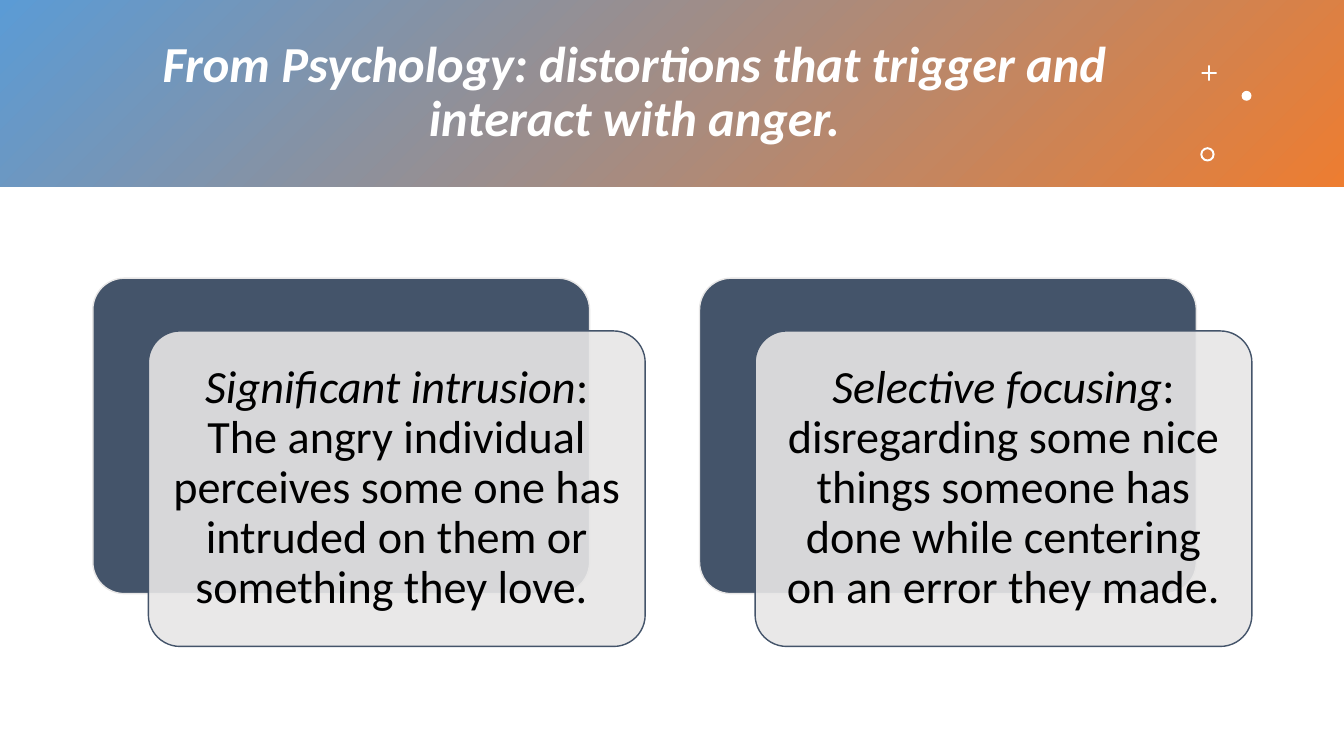
from pptx import Presentation
from pptx.dml.color import RGBColor
from pptx.enum.shapes import MSO_SHAPE as Preset
from pptx.enum.text import MSO_ANCHOR as Anchor, PP_ALIGN as Align
from pptx.oxml.xmlchemy import OxmlElement
from pptx.util import Cm, Pt

COLORS = {
    "blue": "5B9BD5",
    "orange": "ED7D31",
    "slate": "44546A",
    "gray": "E7E6E6",
    "white": "FFFFFF",
    "black": "000000",
}
FONT = "Calibri"
WIDTH, HEIGHT = 33.87, 19.05
MARGIN = 2.34
CARD_TOP, CARD_WIDTH, CARD_HEIGHT = 7.01, 12.52, 7.95
CARD_PITCH = 15.29
OFFSET_X, OFFSET_Y = 1.4, 1.33

CARDS = [
    ("Significant intrusion",
     ": The angry individual perceives some one has intruded on them "
     "or something they love. "),
    ("Selective focusing",
     ": disregarding some nice things someone has done while centering "
     "on an error they made."),
]
# preset, left, top, size, adjustment
ORNAMENTS = [
    (Preset.CROSS, 30.28, 1.65, 0.38, 0.44),
    (Preset.OVAL, 31.29, 2.29, 0.25, None),
    (Preset.DONUT, 30.25, 3.71, 0.36, 0.14),
]


def color(name):
    """Return the named palette colour."""
    return RGBColor.from_string(COLORS[name])


class SlideBuilder:
    """Holds the text style and the slide being built."""

    def __init__(self, slide, font):
        self.slide = slide
        self.font = font

    def shape(self, preset, left, top, width, height, fill,
              line=None, adjustment=None, opacity=None):
        """Add a preset shape with a solid fill, sized in centimetres."""
        shape = self.slide.shapes.add_shape(
            preset, Cm(left), Cm(top), Cm(width), Cm(height))
        shape.shadow.inherit = False
        shape.fill.solid()
        shape.fill.fore_color.rgb = color(fill)
        if opacity is not None:
            alpha = OxmlElement("a:alpha")
            alpha.set("val", str(opacity * 1000))
            shape.element.spPr.find(".//{*}srgbClr").append(alpha)
        if line:
            shape.line.color.rgb = color(line)
            shape.line.width = Pt(1)
        else:
            shape.line.fill.background()
        if adjustment is not None:
            shape.adjustments[0] = adjustment
        return shape

    def band(self, height, start, end):
        """Add the full-width header band with a diagonal gradient."""
        band = self.shape(Preset.RECTANGLE, 0, 0, WIDTH, height, start)
        band.fill.gradient()
        band.fill.gradient_angle = 315
        for stop, name in zip(band.fill.gradient_stops, (start, end)):
            stop.color.rgb = color(name)

    def add_text(self, frame, runs, size, fill, bold=False):
        """Add (text, italic) runs as one centred paragraph."""
        frame.word_wrap = True
        frame.vertical_anchor = Anchor.MIDDLE
        paragraph = frame.paragraphs[0]
        paragraph.alignment = Align.CENTER
        paragraph.line_spacing = 0.9
        for text, italic in runs:
            run = paragraph.add_run()
            run.text = text
            run.font.name = self.font
            run.font.size = Pt(size)
            run.font.bold = bold
            run.font.italic = italic
            run.font.color.rgb = color(fill)

    def title(self, text, left, top, width, height):
        """Add the slide title."""
        box = self.slide.shapes.add_textbox(
            Cm(left), Cm(top), Cm(width), Cm(height))
        self.add_text(box.text_frame, [(text, True)], 36, "white", bold=True)

    def card(self, left, top, term, meaning):
        """Add a dark card with a translucent text card over it."""
        self.shape(Preset.ROUNDED_RECTANGLE, left, top, CARD_WIDTH,
                   CARD_HEIGHT, "slate", "gray", 0.1)
        front = self.shape(
            Preset.ROUNDED_RECTANGLE, left + OFFSET_X, top + OFFSET_Y,
            CARD_WIDTH, CARD_HEIGHT, "gray", "slate", 0.1, opacity=90)
        frame = front.text_frame
        frame.margin_left = frame.margin_right = Cm(0.35)
        frame.margin_top = frame.margin_bottom = Cm(0.35)
        self.add_text(frame, [(term, True), (meaning, False)], 33, "black")


def main():
    """Build and save the presentation."""
    presentation = Presentation()
    presentation.slide_width = Cm(WIDTH)
    presentation.slide_height = Cm(HEIGHT)
    slide = presentation.slides.add_slide(presentation.slide_layouts[6])
    builder = SlideBuilder(slide, FONT)

    builder.band(4.7, "blue", "orange")
    builder.title("From Psychology: distortions that trigger and "
                  "interact with anger.", MARGIN, 0.84, 27.31, 3.02)
    for preset, left, top, size, adjustment in ORNAMENTS:
        builder.shape(preset, left, top, size, size, "white",
                      adjustment=adjustment)
    for index, (term, meaning) in enumerate(CARDS):
        builder.card(MARGIN + index * CARD_PITCH, CARD_TOP, term, meaning)

    presentation.save("out.pptx")


main()
